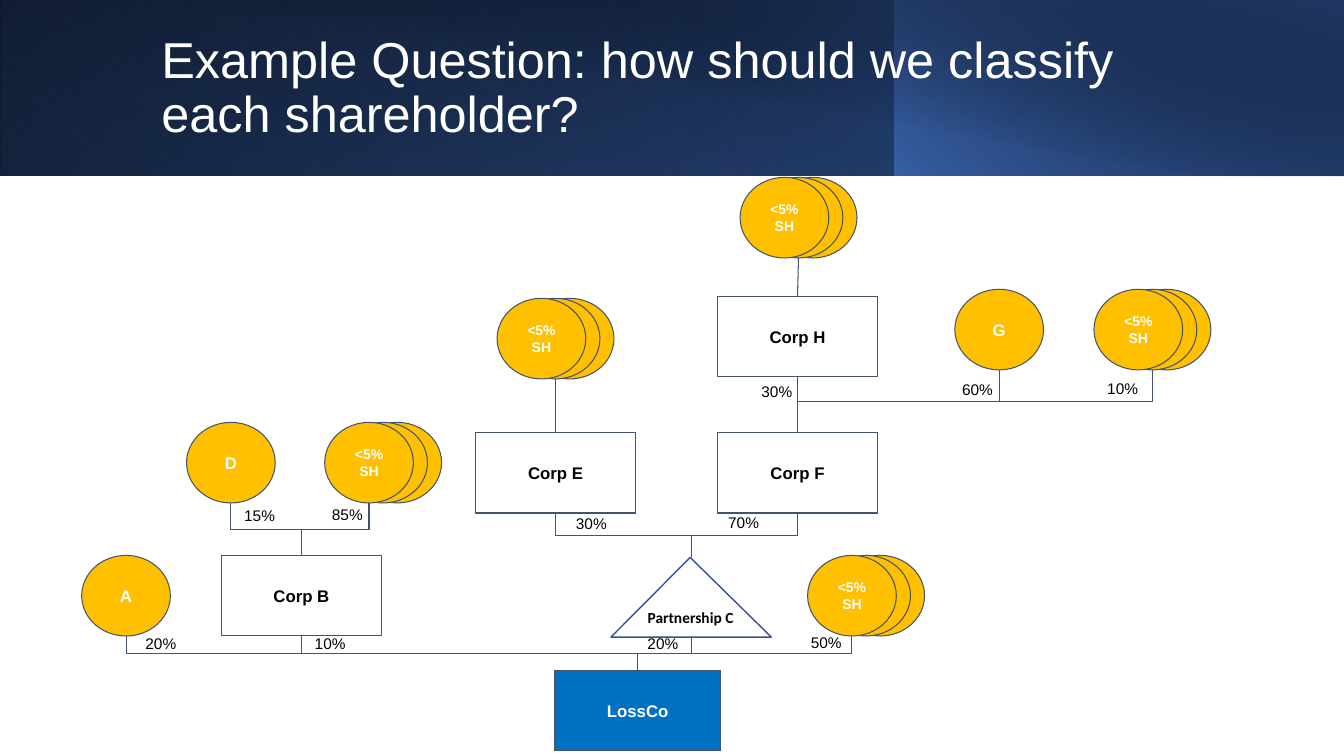
import pptx
import pptx.util
import pptx.dml.color
import pptx.enum.shapes
import pptx.enum.text
import pptx.oxml
import pptx.oxml.ns

Inches = pptx.util.Inches
RGBColor = pptx.dml.color.RGBColor
KIND = pptx.enum.shapes.MSO_SHAPE
LINE = pptx.enum.shapes.MSO_CONNECTOR
MIDDLE = pptx.enum.text.MSO_ANCHOR.MIDDLE
CENTER = pptx.enum.text.PP_ALIGN.CENTER

WHITE = RGBColor(0xFF, 0xFF, 0xFF)
BLACK = RGBColor(0, 0, 0)
GOLD = RGBColor(0xFF, 0xC0, 0x00)
BLUE = RGBColor(0x00, 0x70, 0xC0)
SLATE = RGBColor(0x44, 0x54, 0x6A)
NAVY = RGBColor(0x32, 0x54, 0x91)

# Format values by node kind
BOX = dict(kind=KIND.RECTANGLE, wide=1.58, high=0.8, fill=WHITE, line=SLATE, width=0.75,
           font=dict(name="Arial", size=pptx.util.Pt(12), bold=True), ink=BLACK)
LOSS = dict(BOX, wide=1.65, fill=BLUE, ink=WHITE)
DISC = dict(BOX, kind=KIND.FLOWCHART_CONNECTOR, wide=0.88, fill=GOLD, ink=WHITE)
STACK = dict(DISC, font=dict(DISC["font"], size=pptx.util.Pt(10)))
PART = dict(BOX, kind=KIND.ISOSCELES_TRIANGLE, wide=1.59, high=0.79, line=NAVY, width=1,
            font=dict(name="Calibri", size=pptx.util.Pt(11), bold=True))
NOTE = dict(name="Arial", size=pptx.util.Pt(11))

deck = pptx.Presentation()
deck.slide_width, deck.slide_height = Inches(13.33), Inches(7.5)
slide = deck.slides.add_slide(deck.slide_layouts[5])
shapes = slide.shapes


def write(shape, text, font, ink):
    """Put centred text in a shape and format it."""
    para = shape.text_frame.paragraphs[0]
    para.alignment = CENTER
    run = para.add_run()
    run.text = text
    for key, val in font.items():
        setattr(run.font, key, val)
    run.font.color.rgb = ink


def add_node(left, top, look, text=""):
    """Draw one party in the chart."""
    node = shapes.add_shape(look["kind"], Inches(left), Inches(top),
                            Inches(look["wide"]), Inches(look["high"]))
    node.shadow.inherit = False
    node.fill.solid()
    node.fill.fore_color.rgb = look["fill"]
    node.line.color.rgb = look["line"]
    node.line.width = pptx.util.Pt(look["width"])
    frame = node.text_frame
    frame.vertical_anchor = MIDDLE
    frame.word_wrap = look is not PART
    if look is not PART:
        for side in ("left", "top", "right", "bottom"):
            setattr(frame, "margin_" + side, Inches(0.1))
    if text:
        write(node, text, look["font"], look["ink"])
    return node


# Header bands: left, width, height, turn, flip, angle, stops (place, colour, opacity)
bands = [
    (0, 13.33, 1.74, 0, True, 140, [(0, "000000", 100), (100, "2F5597", 100)]),
    (0, 8.88, 1.74, 180, True, 230, [(20, "4472C4", 0), (100, "203864", 55)]),
    (8.87, 4.46, 1.74, 0, True, 220, [(0, "4472C4", 66), (100, "000000", 30)]),
    (0.5, 12.83, 1.75, 0, False, 280, [(50, "000000", 0), (99, "203864", 52)]),
]
for left, wide, high, turn, flip, angle, stops in bands:
    band = shapes.add_shape(KIND.RECTANGLE, Inches(left), 0, Inches(wide), Inches(high))
    band.shadow.inherit = False
    band.line.fill.background()
    band.rotation = turn
    props = band._element.spPr
    if flip:
        props.xfrm.set("flipH", "1")
    marks = "".join(
        f'<a:gs pos="{place * 1000}"><a:srgbClr val="{tint}">'
        f'<a:alpha val="{alpha * 1000}"/></a:srgbClr></a:gs>'
        for place, tint, alpha in stops)
    grad = pptx.oxml.parse_xml(
        f'<a:gradFill {pptx.oxml.ns.nsdecls("a")} rotWithShape="1"><a:gsLst>{marks}</a:gsLst>'
        f'<a:lin ang="{angle * 60000}" scaled="0"/></a:gradFill>')
    props.find(pptx.oxml.ns.qn("a:prstGeom")).addnext(grad)

# Title, brought in front of the bands
title = shapes.title
title.left, title.top, title.width, title.height = map(Inches, (1.5, 0.32, 10.82, 1.13))
title.text_frame.text = "Example Question: how should we classify each shareholder?"
title.text_frame.vertical_anchor = MIDDLE
title.text_frame.word_wrap = True
para = title.text_frame.paragraphs[0]
para.alignment = pptx.enum.text.PP_ALIGN.LEFT
para.line_spacing = 0.9
for key, val in dict(name="Arial", size=pptx.util.Pt(36)).items():
    setattr(para.font, key, val)
para.font.color.rgb = WHITE
shapes._spTree.append(title._element)

# Companies, partnership and single holders
nodes = {}
for name, left, top, look in [
    ("LossCo", 5.5, 6.65, LOSS), ("A", 0.81, 5.51, DISC), ("Corp B", 2.2, 5.51, BOX),
    ("Partnership C", 6.06, 5.53, PART), ("Corp E", 4.72, 4.29, BOX),
    ("Corp F", 7.12, 4.29, BOX), ("G", 9.47, 2.87, DISC), ("Corp H", 7.12, 2.94, BOX),
    ("D", 1.85, 4.19, DISC),
]:
    nodes[name] = add_node(left, top, look, name)
nodes["Partnership C"].adjustments[0] = 0.494

# Stacks of small holders, back to front; some lines start at the middle disc
for owned, left, top, start in [
    ("LossCo", 8.01, 5.51, 0), ("Corp E", 4.93, 2.96, 1), ("Corp F", 10.85, 2.87, 1),
    ("Corp H", 7.34, 1.76, 1), ("Corp B", 3.22, 4.19, 0),
]:
    for step in (2, 1, 0):
        disc = add_node(left + 0.14 * step, top, STACK, "" if step else "<5% SH")
        if step == start:
            nodes["Small " + owned] = disc

# Holdings: owner, owned, line kind
for owner, owned, kind in [
    ("A", "LossCo", LINE.ELBOW), ("Small LossCo", "LossCo", LINE.ELBOW),
    ("Partnership C", "LossCo", LINE.ELBOW), ("Corp B", "LossCo", LINE.ELBOW),
    ("Corp E", "Partnership C", LINE.ELBOW), ("Corp F", "Partnership C", LINE.ELBOW),
    ("G", "Corp F", LINE.ELBOW), ("Small Corp F", "Corp F", LINE.ELBOW),
    ("Small Corp B", "Corp B", LINE.ELBOW), ("D", "Corp B", LINE.ELBOW),
    ("Small Corp E", "Corp E", LINE.STRAIGHT), ("Corp H", "Corp F", LINE.STRAIGHT),
    ("Small Corp H", "Corp H", LINE.STRAIGHT),
]:
    link = shapes.add_connector(kind, 0, 0, 0, 0)
    link.begin_connect(nodes[owner], 2)
    link.end_connect(nodes[owned], 0)
    # The bottom point has its own number on discs and triangles
    site = {KIND.FLOWCHART_CONNECTOR: "4", KIND.ISOSCELES_TRIANGLE: "3"}.get(
        nodes[owner].auto_shape_type, "2")
    link._element.find(".//" + pptx.oxml.ns.qn("a:stCxn")).set("idx", site)
    link.line.color.rgb = SLATE
    link.line.width = pptx.util.Pt(0.75)
    props = link._element.spPr
    props.append(pptx.oxml.parse_xml(f'<a:effectLst {pptx.oxml.ns.nsdecls("a")}/>'))
    if kind == LINE.ELBOW:
        # Turn the elbow so that it leaves downwards
        run, drop = link.end_x - link.begin_x, link.end_y - link.begin_y
        midx, midy = (link.begin_x + link.end_x) // 2, (link.begin_y + link.end_y) // 2
        link.width, link.height = drop, abs(run)
        link.left, link.top = midx - drop // 2, midy - abs(run) // 2
        props.xfrm.flipH = run > 0
        props.xfrm.set("rot", str((270 if run > 0 else 90) * 60000))

# Share labels
for text, left, top in [
    ("70%", 6.65, 5), ("30%", 5.14, 5.01), ("30%", 6.98, 3.7), ("10%", 10.41, 3.67),
    ("60%", 8.97, 3.68), ("20%", 0.87, 6.2), ("10%", 2.55, 6.2), ("20%", 5.85, 6.2),
    ("50%", 7.47, 6.19), ("15%", 1.85, 4.93), ("85%", 2.72, 4.92),
]:
    label = shapes.add_textbox(Inches(left), Inches(top), Inches(1.45), Inches(0.3))
    label.text_frame.word_wrap = True
    for side in ("left", "top", "right", "bottom"):
        setattr(label.text_frame, "margin_" + side, Inches(0.1))
    write(label, text, NOTE, BLACK)

deck.save("out.pptx")
